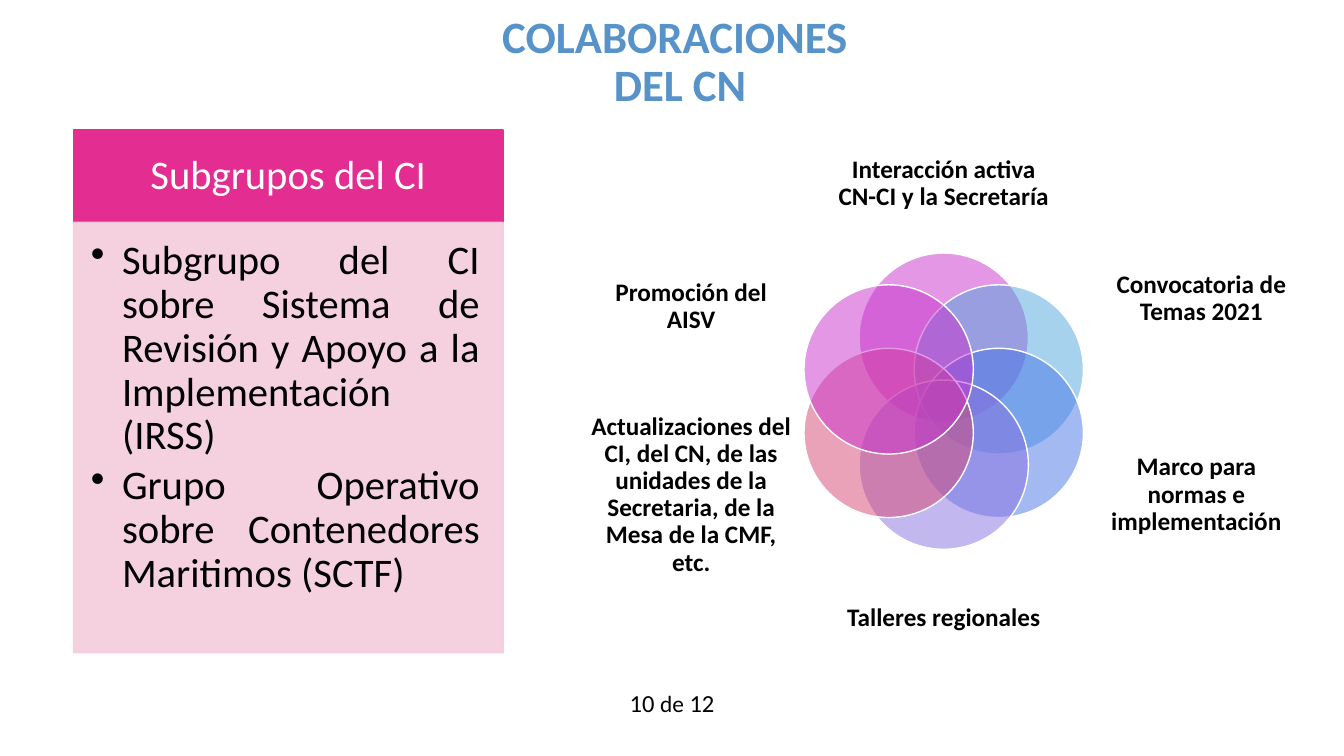
import math

from lxml import etree
from pptx import Presentation
from pptx import util as u
from pptx.dml.color import RGBColor
from pptx.enum import shapes, text
from pptx.oxml import ns

COLORS = {
    "title": "5792C9", "ink": "000000", "white": "FFFFFF",
    "header": "E32D91", "panel": "F4CDDC", "orchid": "C830CC",
    "sky": "4EA6DC", "blue": "4775E7", "violet": "8971E1", "rose": "D54773",
}
FONT = "Calibri"


class CollaborationSlide:
    def __init__(self, deck):
        self.width, self.height = deck.slide_width, deck.slide_height
        self.slide = deck.slides.add_slide(deck.slide_layouts[5])

    def color(self, name):
        return RGBColor.from_string(COLORS[name])

    def area(self, left, top, width, height):
        return (round(self.width * left / 100), round(self.height * top / 100),
                round(self.width * width / 100), round(self.height * height / 100))

    def frame(self, shape, anchor, insets=(0, 0, 0, 0), wrap=True):
        frame = shape.text_frame
        frame.word_wrap = wrap
        frame.auto_size = text.MSO_AUTO_SIZE.NONE
        frame.vertical_anchor = anchor
        (frame.margin_left, frame.margin_top,
         frame.margin_right, frame.margin_bottom) = map(u.Inches, insets)
        return frame

    def style(self, paragraph, size, color="ink", bold=False,
              align=text.PP_ALIGN.CENTER, spacing=0.9):
        paragraph.alignment = align
        paragraph.line_spacing = spacing
        font = paragraph.font
        font.name, font.bold = FONT, bold
        font.size = u.Pt(size)
        font.color.rgb = self.color(color)

    def title(self, wording, area):
        heading = self.slide.shapes.title
        heading.left, heading.top, heading.width, heading.height = self.area(*area)
        frame = self.frame(heading, text.MSO_ANCHOR.MIDDLE, (0.1, 0.05, 0.1, 0.05))
        frame.paragraphs[0].text = wording
        self.style(frame.paragraphs[0], 32, "title", True)

    def block(self, kind, area, fill, outline, fill_alpha=100, outline_alpha=100):
        block = self.slide.shapes.add_shape(kind, *self.area(*area))
        block.shadow.inherit = False
        block.fill.solid()
        block.fill.fore_color.rgb = self.color(fill)
        block.line.color.rgb = self.color(outline)
        block.line.width = u.Pt(1)
        for holder, alpha in (("a:solidFill", fill_alpha),
                              ("a:ln/a:solidFill", outline_alpha)):
            if alpha < 100:
                tint = block._element.spPr.xpath(f"{holder}/a:srgbClr")[0]
                etree.SubElement(tint, ns.qn("a:alpha"), val=str(alpha * 1000))
        return block

    def petal(self, center_x, center_y, diameter, fill):
        width, height = diameter, diameter * self.width / self.height
        area = (center_x - width / 2, center_y - height / 2, width, height)
        self.block(shapes.MSO_SHAPE.OVAL, area, fill, "white", 50)

    def label(self, wording, area):
        label = self.slide.shapes.add_textbox(*self.area(*area))
        frame = self.frame(label, text.MSO_ANCHOR.MIDDLE)
        frame.text = wording
        self.style(frame.paragraphs[0], 18, bold=True)

    def header(self, wording, area):
        header = self.block(shapes.MSO_SHAPE.RECTANGLE, area, "header", "header")
        frame = self.frame(header, text.MSO_ANCHOR.MIDDLE, (0.23, 0.13, 0.23, 0.13))
        frame.text = wording
        self.style(frame.paragraphs[0], 29, "white")

    def bullet_panel(self, items, area):
        panel = self.block(shapes.MSO_SHAPE.RECTANGLE, area, "panel", "panel", 90, 90)
        frame = self.frame(panel, text.MSO_ANCHOR.TOP, (0.17, 0.17, 0.23, 0.25))
        frame.text = "\n".join(items)
        for item in frame.paragraphs:
            properties = item._p.get_or_add_pPr()
            properties.set("marL", str(u.Inches(0.31)))
            properties.set("indent", str(-u.Inches(0.31)))
            etree.SubElement(properties, ns.qn("a:buChar"), char="•")
            self.style(item, 29, align=text.PP_ALIGN.JUSTIFY)
            item.space_after = u.Pt(4.35)

    def page_number(self, parts, area):
        page = self.slide.shapes.add_textbox(*self.area(*area))
        frame = self.frame(page, text.MSO_ANCHOR.TOP, (0.17, 0.08, 0.17, 0.08), False)
        line = frame.paragraphs[0]
        for wording, size in parts:
            part = line.add_run()
            part.text = wording
            part.font.size = u.Pt(size)
        self.style(line, 17.5, spacing=1.0)


def main():
    deck = Presentation()
    deck.slide_width, deck.slide_height = u.Inches(13.33), u.Inches(7.5)
    page = CollaborationSlide(deck)
    page.title("COLABORACIONES \vDEL CN", (26.86, 0, 47.49, 16.67))

    topics = [
        ("Interacción activa CN-CI y la Secretaría", "orchid", (62.34, 16.67, 15.75, 15.33)),
        ("Convocatoria de Temas 2021", "sky", (81.92, 31.2, 14.93, 16.67)),
        ("Marco para normas e implementación", "blue", (81.55, 56.13, 14.93, 18.67)),
        ("Talleres regionales", "violet", (62.34, 74.13, 15.75, 15.33)),
        ("Actualizaciones del CI, del CN, de las unidades de la Secretaria, "
         "de la Mesa de la CMF, etc.", "rose", (43.96, 56.13, 14.93, 18.67)),
        ("Promoción del AISV", "orchid", (43.96, 31.2, 14.93, 18.67)),
    ]
    for index, (topic, fill, area) in enumerate(topics):
        angle = math.tau * index / len(topics)
        page.petal(70.22 + 4.73 * math.sin(angle), 53.07 - 8.4 * math.cos(angle),
                   12.6, fill)
        page.label(topic, area)

    page.page_number([("10 ", 17.5), ("de", 16.7), (" 12", 17.5)],
                     (44.79, 90, 10.43, 6.13))
    page.header("Subgrupos del CI", (5.48, 17.2, 31.96, 12.2))
    page.bullet_panel(
        ["Subgrupo del CI sobre Sistema de Revisión y Apoyo a la Implementación (IRSS)",
         "Grupo Operativo sobre Contenedores Maritimos (SCTF)"],
        (5.48, 29.4, 31.96, 56.93))
    deck.save("out.pptx")


if __name__ == "__main__":
    main()
